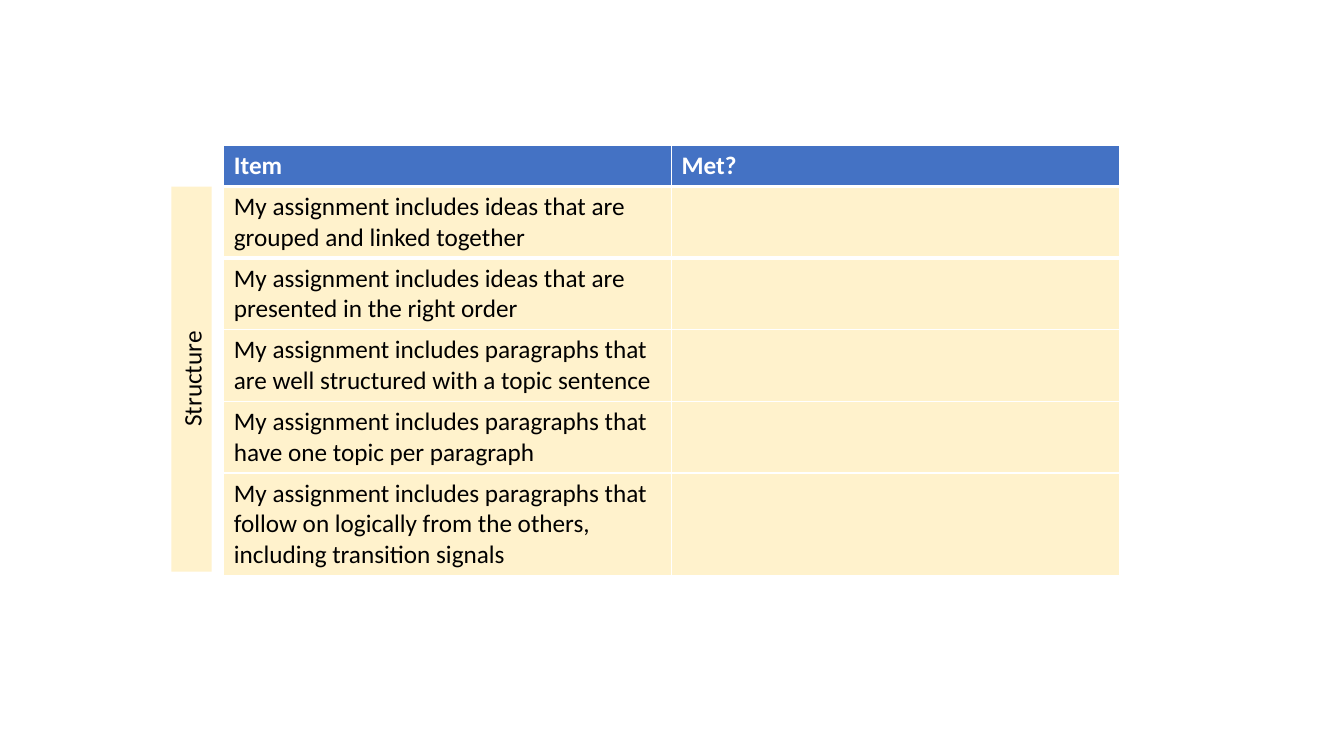
import pptx
import pptx.util
import pptx.dml.color
import pptx.enum.shapes
import pptx.enum.text
import pptx.oxml
import pptx.oxml.ns

Inches = pptx.util.Inches
COLORS = {"head": "4472C4", "cream": "FFF2CC", "white": "FFFFFF", "black": "000000"}
ITEMS = [
    "My assignment includes ideas that are grouped and linked together",
    "My assignment includes ideas that are presented in the right order",
    "My assignment includes paragraphs that are well structured with a topic sentence",
    "My assignment includes paragraphs that have one topic per paragraph",
    "My assignment includes paragraphs that follow on logically from the others, "
    "including transition signals",
]


def style(box, text, fill, color, bold=False):
    """Fill a cell or shape and set its text and font."""
    box.fill.solid()
    box.fill.fore_color.rgb = pptx.dml.color.RGBColor.from_string(COLORS[fill])
    para = box.text_frame.paragraphs[0]
    para.text = text
    para.font.name = "Calibri"
    para.font.size = pptx.util.Pt(18)
    para.font.bold = bold
    para.font.color.rgb = pptx.dml.color.RGBColor.from_string(COLORS[color])


def add_grid(top, heights, rows, fill, color, bold):
    """Add a two-column table with white borders, thick under its first row."""
    frame = slide.shapes.add_table(
        len(rows), 2, Inches(2.22), Inches(top), Inches(8.88), Inches(sum(heights)))
    grid = frame.table
    grid.horz_banding = False
    for col in grid.columns:
        col.width = Inches(4.44)
    for r, (height, row) in enumerate(zip(heights, rows)):
        grid.rows[r].height = Inches(height)
        for c, text in enumerate(row):
            cell = grid.cell(r, c)
            style(cell, text, fill, color, bold)
            widths = {"lnL": 1, "lnR": 1, "lnT": 3 if r == 1 else 1, "lnB": 3 if r == 0 else 1}
            for i, (side, width) in enumerate(widths.items()):
                line = pptx.oxml.parse_xml(
                    f'<a:{side} {pptx.oxml.ns.nsdecls("a")} w="{width * 12700}"><a:solidFill>'
                    f'<a:srgbClr val="{COLORS["white"]}"/></a:solidFill></a:{side}>')
                cell._tc.get_or_add_tcPr().insert(i, line)


deck = pptx.Presentation()
deck.slide_width = Inches(13.33)
deck.slide_height = Inches(7.5)
slide = deck.slides.add_slide(deck.slide_layouts[6])

add_grid(1.85, [0.7] * 4 + [1], [(item, "") for item in ITEMS], "cream", "black", False)

label = slide.shapes.add_shape(
    pptx.enum.shapes.MSO_SHAPE.RECTANGLE,
    Inches(-0.01), Inches(3.56), Inches(3.82), Inches(0.4))
label.rotation = 270
label.shadow.inherit = False
label.line.fill.background()
style(label, "Structure", "cream", "black")
label.text_frame.word_wrap = True
label.text_frame.paragraphs[0].alignment = pptx.enum.text.PP_ALIGN.CENTER

add_grid(1.44, [0.41], [("Item", "Met?")], "head", "white", True)

deck.save("out.pptx")
